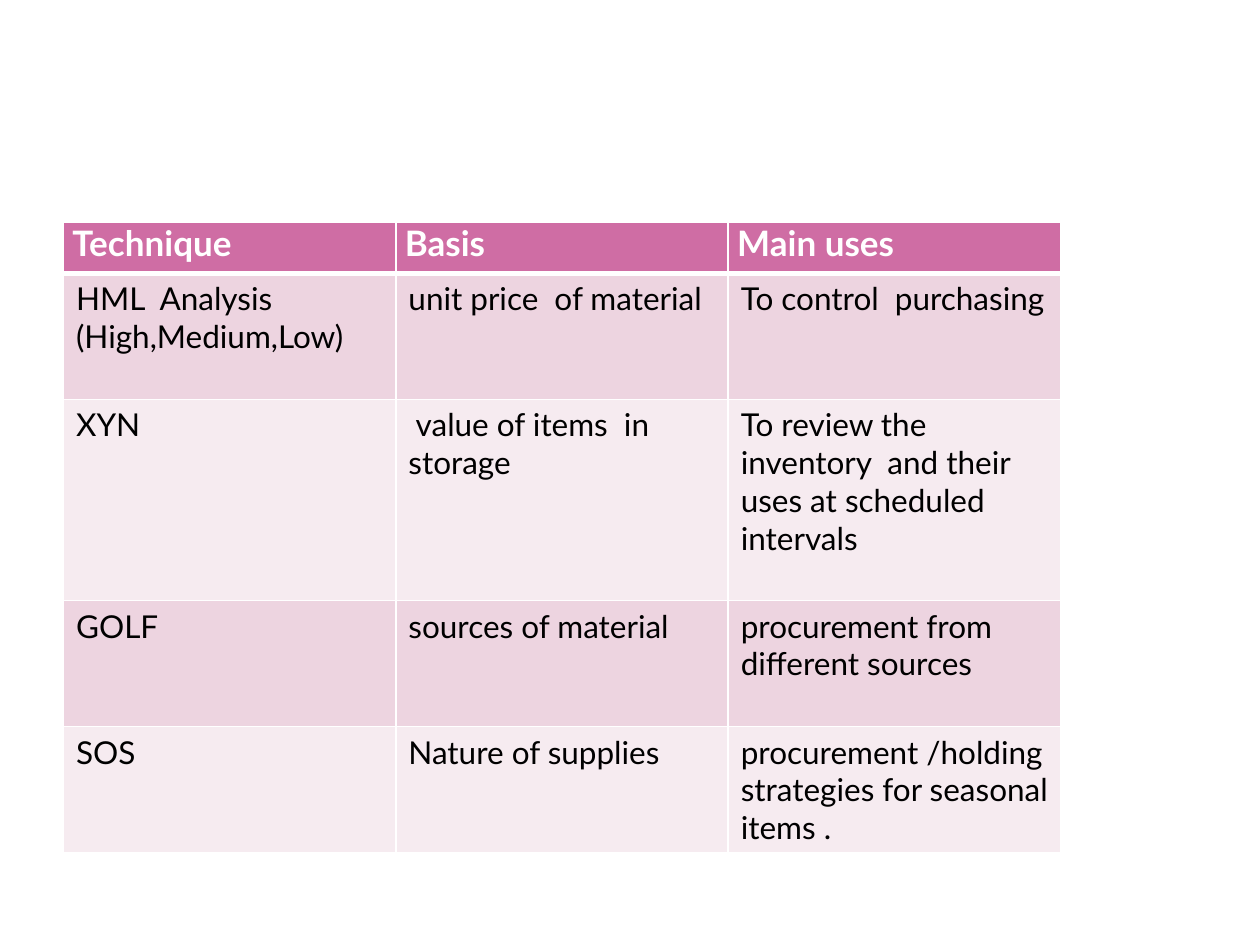
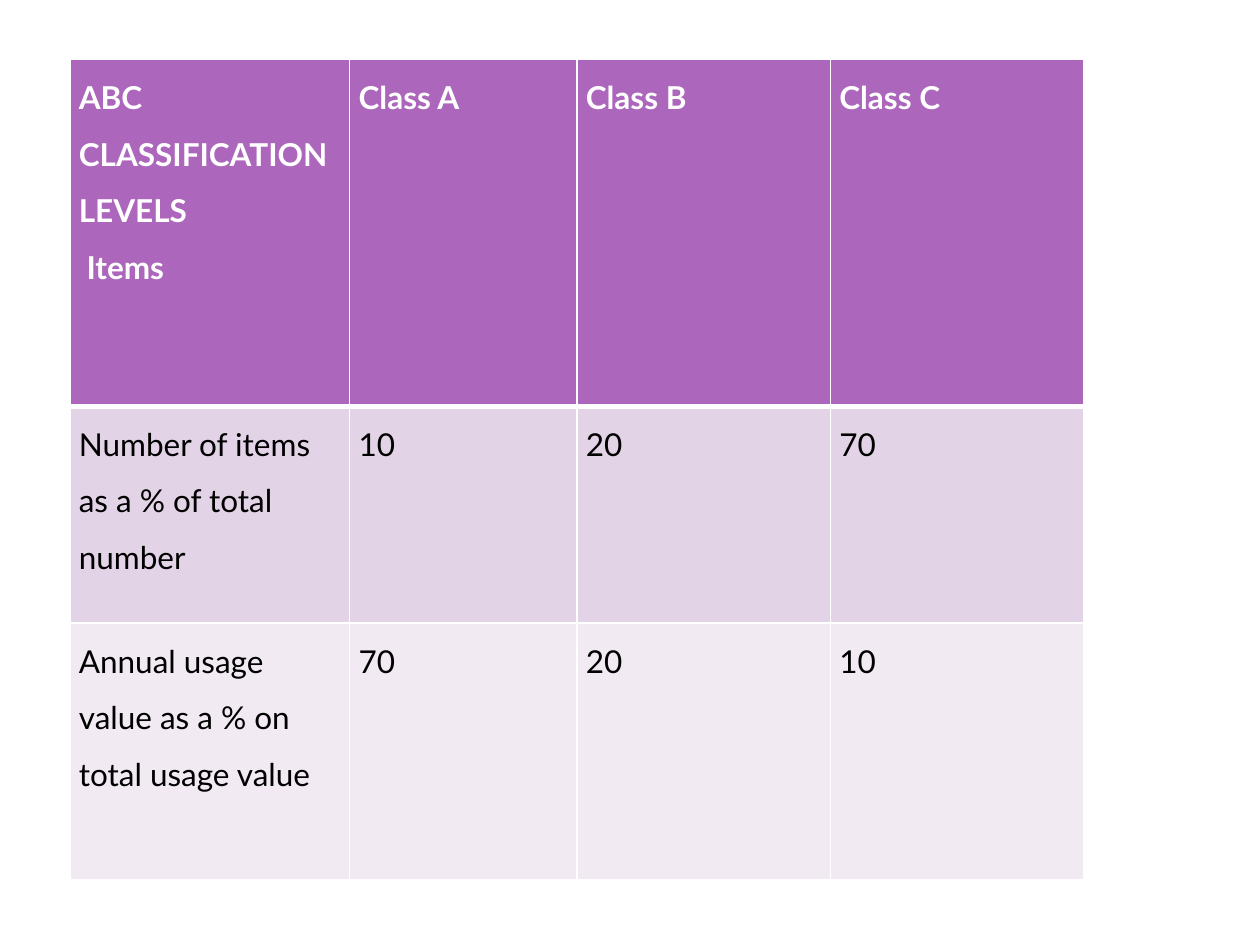
from lxml.etree import SubElement
from pptx import Presentation
from pptx.dml.color import RGBColor as RGB
from pptx.oxml.ns import qn
from pptx.util import Cm, Pt

WHITE = RGB(0xFF, 0xFF, 0xFF)
BLACK = RGB(0x00, 0x00, 0x00)
PINK = RGB(0xCF, 0x6D, 0xA4)
PINK_BANDS = RGB(0xED, 0xD4, 0xE0), RGB(0xF6, 0xEB, 0xF0)
PURPLE = RGB(0xAC, 0x66, 0xBB)
PURPLE_BANDS = RGB(0xE3, 0xD3, 0xE7), RGB(0xF1, 0xEA, 0xF3)

TECHNIQUES = [
    ["Technique", "Basis", "Main uses"],
    ["HML  Analysis (High,Medium,Low)", "unit price  of material", "To control  purchasing"],
    ["XYN", " value of items  in storage",
     "To review the inventory  and their uses at scheduled intervals"],
    ["GOLF", "sources of material", "procurement from different sources"],
    ["SOS", "Nature of supplies", "procurement /holding strategies for seasonal items ."],
]
ABC_LEVELS = [
    ["ABC CLASSIFICATION LEVELS\n Items", "Class A", "Class B", "Class C"],
    ["Number of items as a % of total number", "10", "20", "70"],
    ["Annual usage value as a % on total usage value", "70", "20", "10"],
]


class Deck:
    """Hold the shared table style and the current slide."""

    font = "Lato"
    body_size = Pt(18)
    thin, thick = Pt(1), Pt(3)

    def __init__(self):
        self.presentation = Presentation()
        self.presentation.slide_width = Cm(25.4)
        self.presentation.slide_height = Cm(19.05)
        self.slide = None

    def add_slide(self):
        """Start a blank slide."""
        self.slide = self.presentation.slides.add_slide(self.presentation.slide_layouts[6])

    def add_border(self, cell, side, width):
        """Draw one white cell edge."""
        line = SubElement(cell._tc.get_or_add_tcPr(), qn(f"a:ln{side}"), w=str(width))
        fill = SubElement(line, qn("a:solidFill"))
        SubElement(fill, qn("a:srgbClr"), val=str(WHITE))

    def fill_cell(self, cell, text, row, color, size, spacing, tight):
        """Style one cell and write its paragraphs."""
        header = row == 0
        edges = {"L": self.thin, "R": self.thin,
                 "T": self.thick if row == 1 else self.thin,
                 "B": self.thick if header else self.thin}
        for side, width in edges.items():
            self.add_border(cell, side, width)
        cell.fill.solid()
        cell.fill.fore_color.rgb = color
        if tight:
            cell.margin_left = cell.margin_right = Cm(0.18)
            cell.margin_top = cell.margin_bottom = 0
        frame = cell.text_frame
        for index, wording in enumerate(text.split("\n")):
            paragraph = frame.add_paragraph() if index else frame.paragraphs[0]
            paragraph.line_spacing = spacing
            run = paragraph.add_run()
            run.text = wording
            run.font.name = self.font
            run.font.size = size
            run.font.bold = header
            run.font.color.rgb = WHITE if header else BLACK

    def add_table(self, content, left, top, widths, heights, head_color, bands,
                  head_size=body_size, spacing=1.0, tight_body=False):
        """Add a table with a coloured header and alternating rows."""
        table = self.slide.shapes.add_table(
            len(heights), len(widths), Cm(left), Cm(top),
            Cm(sum(widths)), Cm(sum(heights))).table
        table.horz_banding = False
        for column, width in zip(table.columns, widths):
            column.width = Cm(width)
        for row, (texts, height) in enumerate(zip(content, heights)):
            table.rows[row].height = Cm(height)
            color = bands[(row - 1) % 2] if row else head_color
            size = self.body_size if row else head_size
            for column, text in enumerate(texts):
                self.fill_cell(table.cell(row, column), text, row, color, size,
                               spacing, tight_body or row == 0)


def main():
    """Build both slides and save them."""
    deck = Deck()
    deck.add_slide()
    deck.add_table(TECHNIQUES, 1.28, 4.48, [6.7] * 3, [1.03, 2.54, 4.06, 2.54, 2.54],
                   PINK, PINK_BANDS, head_size=Pt(20))
    deck.add_slide()
    deck.add_table(ABC_LEVELS, 1.41, 1.2, [5.64, 4.58, 5.11, 5.11], [6.99, 4.37, 5.18],
                   PURPLE, PURPLE_BANDS, spacing=1.5, tight_body=True)
    deck.presentation.save("out.pptx")


if __name__ == "__main__":
    main()
